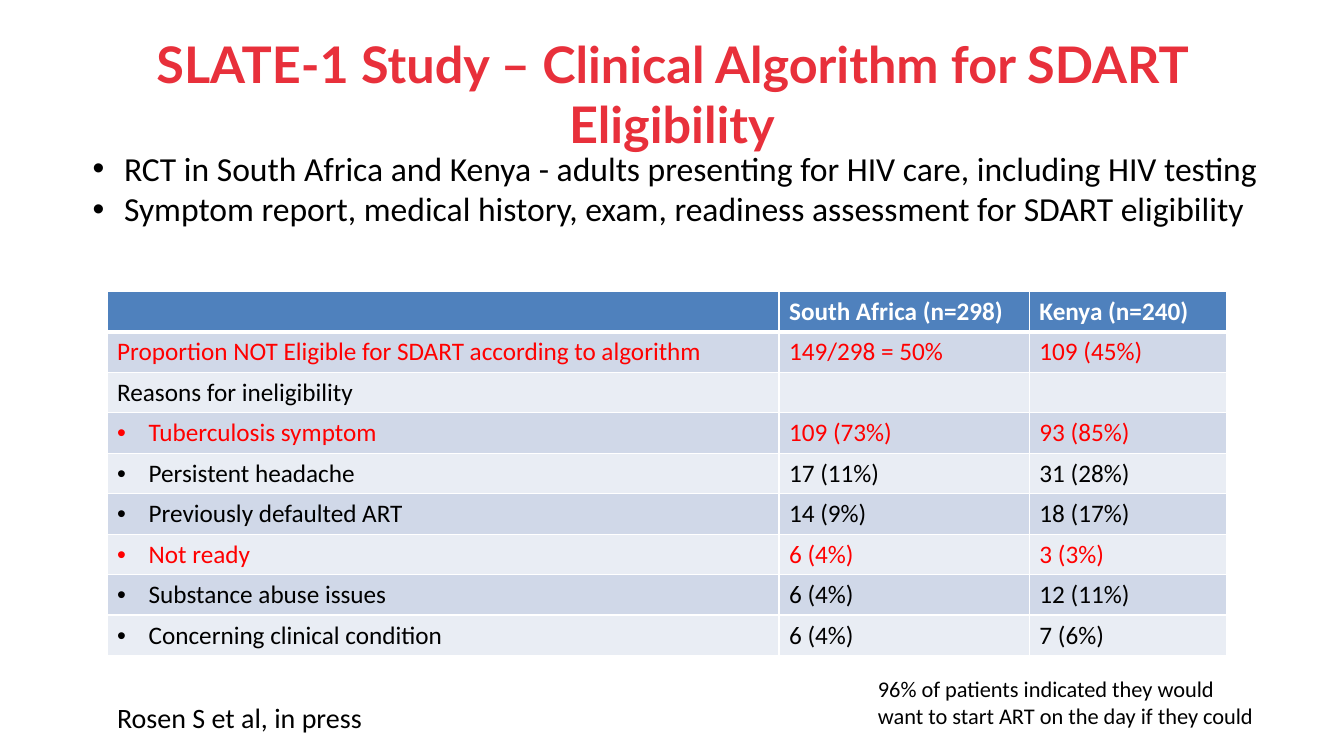
from dataclasses import dataclass

from lxml.etree import SubElement
from pptx import Presentation
from pptx.dml.color import RGBColor as Color
from pptx.enum.text import MSO_ANCHOR as Anchor, PP_ALIGN as Align
from pptx.oxml.ns import qn
from pptx.util import Pt

# Content
TITLE = "SLATE-1 Study – Clinical Algorithm for SDART Eligibility"
POINTS = [
    "RCT in South Africa and Kenya - adults presenting for HIV care, including HIV testing",
    "Symptom report, medical history, exam, readiness assessment for SDART eligibility",
]
HEADER = ("", "South Africa (n=298)", "Kenya (n=240)")
SUMMARY = [
    ("Proportion NOT Eligible for SDART according to algorithm", "149/298 = 50%", "109 (45%)"),
    ("Reasons for ineligibility", "", ""),
]
REASONS = [
    ("Tuberculosis symptom", "109 (73%)", "93 (85%)"),
    ("Persistent headache", "17 (11%)", "31 (28%)"),
    ("Previously defaulted ART", "14 (9%)", "18 (17%)"),
    ("Not ready", "6 (4%)", "3 (3%)"),
    ("Substance abuse issues", "6 (4%)", "12 (11%)"),
    ("Concerning clinical condition", "6 (4%)", "7 (6%)"),
]
HIGHLIGHTED = {SUMMARY[0][0], "Tuberculosis symptom", "Not ready"}
NOTE = "96% of patients indicated they would want to start ART on the day if they could"
CITATION = "Rosen S et al, in press"


@dataclass(frozen=True)
class Theme:
    title_font: str = "Lato"
    body_font: str = "Calibri"
    title_color: str = "E8303B"
    text: str = "000000"
    highlight: str = "FF0000"
    white: str = "FFFFFF"
    header: str = "4F81BD"
    bands: tuple = ("D0D8E8", "E9EDF4")
    title_size: int = 36
    point_size: int = 24
    citation_size: int = 20
    table_size: int = 18
    note_size: int = 16


THEME = Theme()
INDENT = Pt(22.5)


def add_bullet(para):
    props = para._p.get_or_add_pPr()
    props.set("marL", str(INDENT))
    props.set("indent", str(-INDENT))
    SubElement(props, qn("a:buFont"), typeface="Arial")
    SubElement(props, qn("a:buChar"), char="•")


def style(para, size, color=THEME.text, bold=False, font=THEME.body_font):
    para.font.size = Pt(size)
    for span in para.runs:
        span.font.name = font
        span.font.size = Pt(size)
        span.font.bold = bold
        span.font.color.rgb = Color.from_string(color)


def add_text(page, place, lines, size, bullets=False, **look):
    box = page.shapes.add_textbox(*map(Pt, place))
    frame = box.text_frame
    frame.word_wrap = True
    frame.text = "\n".join(lines)
    for para in frame.paragraphs:
        if bullets:
            add_bullet(para)
        style(para, size, **look)
    return frame


def add_borders(cell, top, bottom):
    props = cell._tc.get_or_add_tcPr()
    for side, width in (("L", 1), ("R", 1), ("T", top), ("B", bottom)):
        line = SubElement(props, qn(f"a:ln{side}"), w=str(Pt(width)))
        SubElement(SubElement(line, qn("a:solidFill")), qn("a:srgbClr"), val=THEME.white)


def add_results(page, left, top, widths, row_height):
    rows = [HEADER, *SUMMARY, *REASONS]
    grid = page.shapes.add_table(
        len(rows), len(widths), Pt(left), Pt(top), Pt(sum(widths)), Pt(row_height * len(rows))
    ).table
    for column, width in zip(grid.columns, widths):
        column.width = Pt(width)
    for r, values in enumerate(rows):
        grid.rows[r].height = Pt(row_height)
        is_header = r == 0
        fill = THEME.header if is_header else THEME.bands[(r - 1) % 2]
        color = THEME.highlight if values[0] in HIGHLIGHTED else THEME.text
        for c, value in enumerate(values):
            cell = grid.cell(r, c)
            # The rule under the header is heavier than the others
            add_borders(cell, top=3 if r == 1 else 1, bottom=3 if is_header else 1)
            cell.fill.solid()
            cell.fill.fore_color.rgb = Color.from_string(fill)
            cell.text_frame.text = value
            para = cell.text_frame.paragraphs[0]
            if c == 0 and values in REASONS:
                add_bullet(para)
            style(para, THEME.table_size, THEME.white if is_header else color, is_header)


def main():
    deck = Presentation()
    deck.slide_width, deck.slide_height = Pt(960), Pt(540)
    page = deck.slides.add_slide(deck.slide_layouts[6])

    # Title
    title = add_text(page, (59, 21.6, 842, 90), [TITLE], THEME.title_size,
                     color=THEME.title_color, bold=True, font=THEME.title_font)
    title.vertical_anchor = Anchor.MIDDLE
    title.paragraphs[0].alignment = Align.CENTER

    # Results table
    add_results(page, 76.5, 208.2, (480, 178.8, 140.6), 28.9)

    # Note, study points and citation
    add_text(page, (620, 479, 287, 68), [NOTE], THEME.note_size)
    add_text(page, (59, 102.2, 868, 65.4), POINTS, THEME.point_size, bullets=True)
    add_text(page, (76.5, 497, 250, 31.5), [CITATION], THEME.citation_size)

    deck.save("out.pptx")


if __name__ == "__main__":
    main()
